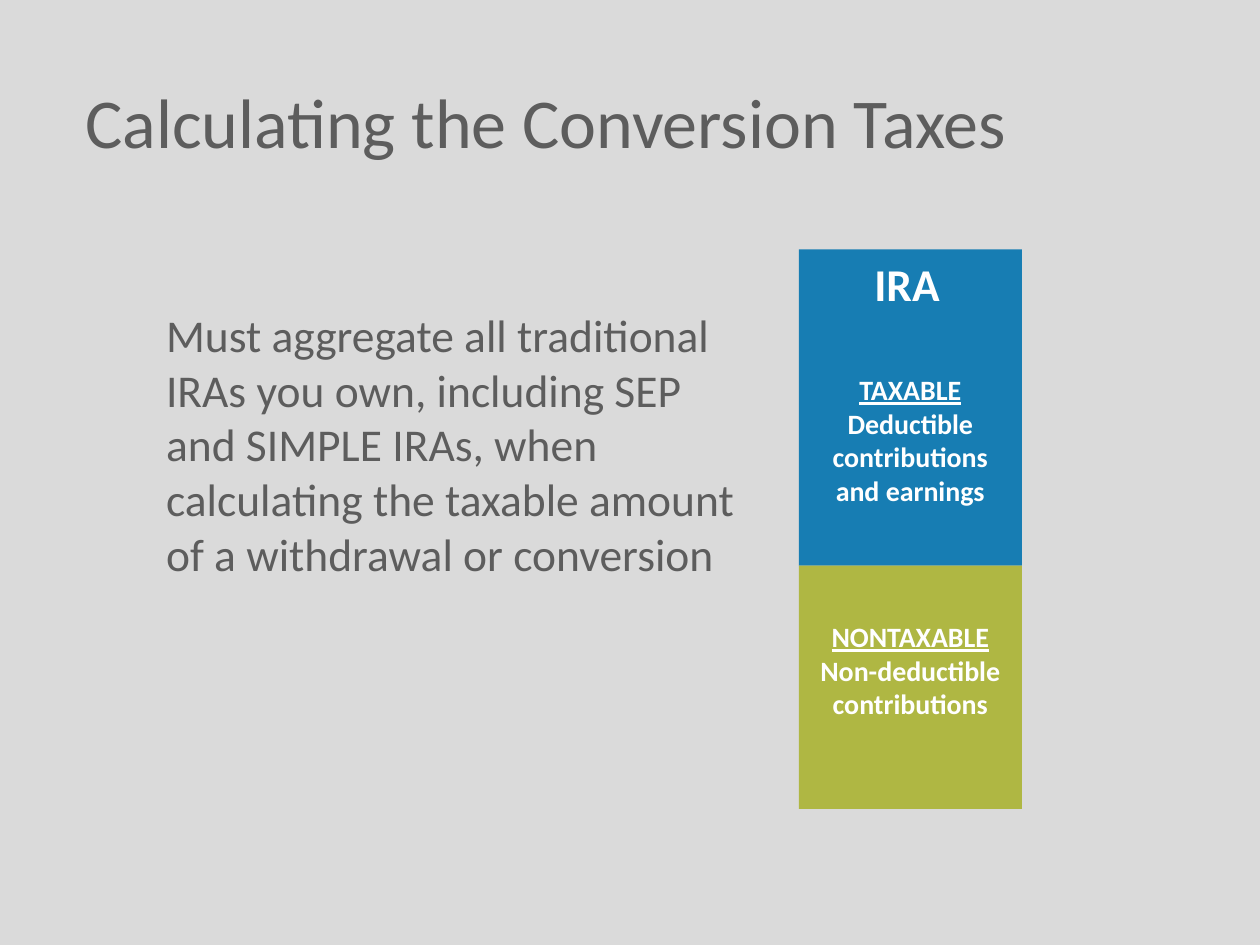
from pptx import Presentation
from pptx.dml.color import RGBColor
from pptx.enum.shapes import MSO_SHAPE
from pptx.enum.text import MSO_ANCHOR, PP_ALIGN
from pptx.util import Inches, Pt

RECTANGLE = MSO_SHAPE.RECTANGLE
TOP, MIDDLE = MSO_ANCHOR.TOP, MSO_ANCHOR.MIDDLE
LEFT, CENTER = PP_ALIGN.LEFT, PP_ALIGN.CENTER

COLORS = {
    "background": "DADADA",
    "text": "5D5D5D",
    "taxable": "177DB3",
    "nontaxable": "AFB743",
    "label": "FFFFFF",
}
FONT = "Calibri"

TITLE = "Calculating the Conversion Taxes"
RULE = ("Must aggregate all traditional IRAs you own, including SEP and SIMPLE "
        "IRAs, when calculating the taxable amount of a withdrawal or conversion")
ACCOUNT = "IRA"
# color, height of the part, label top, label width, heading, detail
IRA_PARTS = [
    ("taxable", 2.51, 2.91, 1.56, "TAXABLE ",
     "Deductible contributions and earnings"),
    ("nontaxable", 1.93, 4.87, 1.79, "NONTAXABLE ",
     "Non-deductible contributions"),
]
BAR_LEFT, BAR_TOP, BAR_WIDTH = 6.34, 1.98, 1.77
LABEL_HEIGHT = 1.2


def rgb(name):
    return RGBColor.from_string(COLORS[name])


def add_text(slide, box, runs, size, color, bold=False, align=LEFT, anchor=TOP):
    """Add a one-paragraph text box; runs are (text, underlined) pairs."""
    frame = slide.shapes.add_textbox(*map(Inches, box)).text_frame
    frame.word_wrap = True
    frame.vertical_anchor = anchor
    paragraph = frame.paragraphs[0]
    paragraph.alignment = align
    font = paragraph.font
    font.name, font.size, font.bold = FONT, Pt(size), bold
    font.color.rgb = rgb(color)
    for text, underlined in runs:
        run = paragraph.add_run()
        run.text = text
        if underlined:
            run.font.underline = True


def add_ira_bar(slide):
    top = BAR_TOP
    center = BAR_LEFT + BAR_WIDTH / 2
    for color, height, label_top, label_width, heading, detail in IRA_PARTS:
        part = slide.shapes.add_shape(
            RECTANGLE, *map(Inches, (BAR_LEFT, top, BAR_WIDTH, height)))
        part.shadow.inherit = False
        part.fill.solid()
        part.fill.fore_color.rgb = rgb(color)
        part.line.fill.background()
        label_box = (center - label_width / 2, label_top, label_width, LABEL_HEIGHT)
        add_text(slide, label_box, [(heading, True), (detail, False)],
                 16, "label", bold=True, align=CENTER)
        top += height
    add_text(slide, (6.84, BAR_TOP, 0.91, 0.54), [(ACCOUNT, False)],
             26, "label", bold=True)


def main():
    prs = Presentation()
    prs.slide_width, prs.slide_height = Inches(10), Inches(7.5)
    slide = prs.slides.add_slide(prs.slide_layouts[6])
    slide.background.fill.solid()
    slide.background.fill.fore_color.rgb = rgb("background")

    add_text(slide, (0.58, 0.58, 9.14, 0.75), [(TITLE, False)],
             40, "text", anchor=MIDDLE)
    add_text(slide, (1.22, 2.39, 4.74, 2.29), [(RULE, False)], 26, "text")
    add_ira_bar(slide)
    prs.save("out.pptx")


if __name__ == "__main__":
    main()
